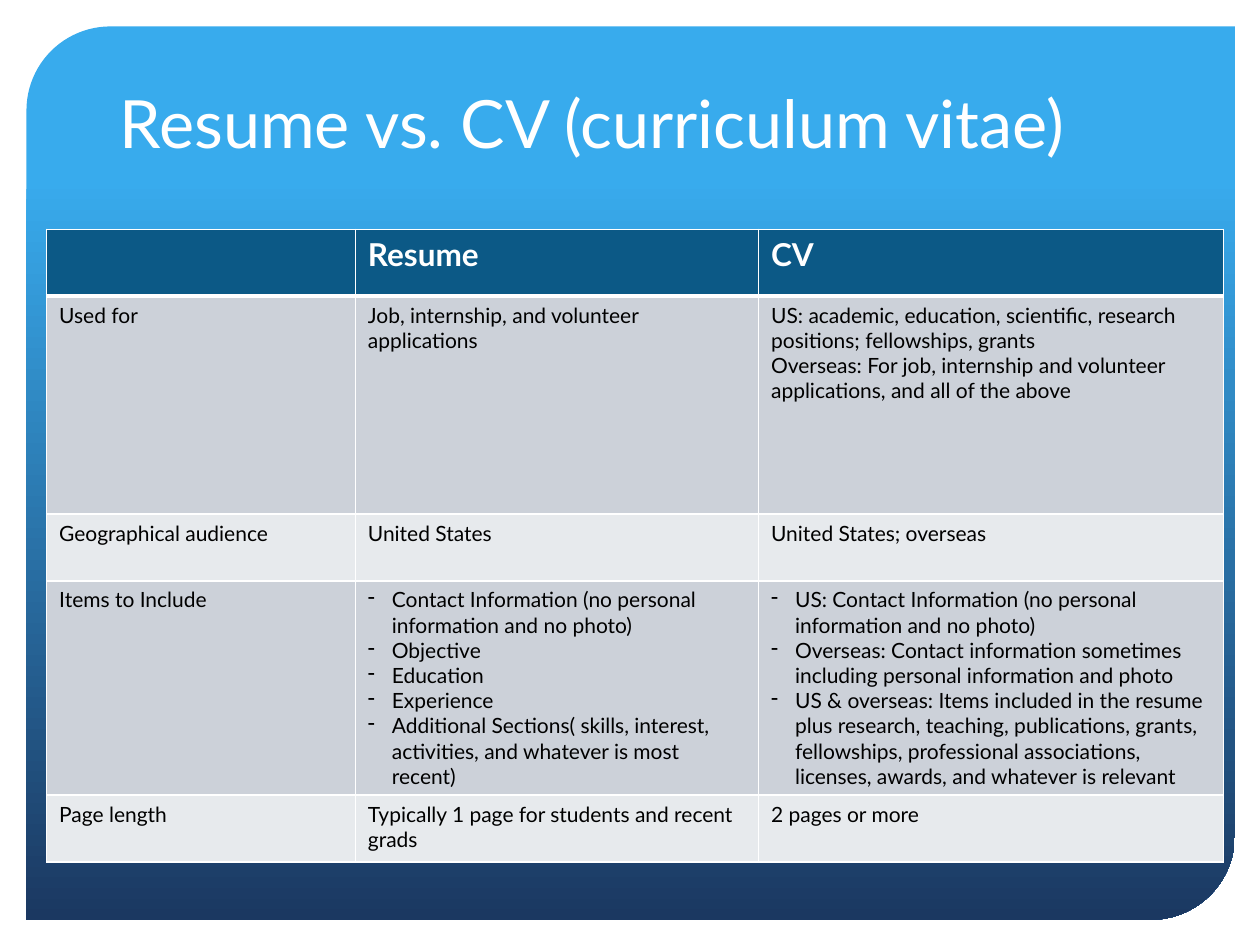
from dataclasses import dataclass

from lxml import etree
from pptx import Presentation
from pptx.dml.color import RGBColor
from pptx.enum.shapes import MSO_SHAPE
from pptx.enum.text import MSO_ANCHOR
from pptx.oxml.ns import qn
from pptx.util import Inches, Pt

PANEL_SHAPE = MSO_SHAPE.ROUND_2_DIAG_RECTANGLE
BOTTOM = MSO_ANCHOR.BOTTOM


@dataclass(frozen=True)
class Theme:
    font: str = "Lato"
    white: str = "FFFFFF"
    black: str = "000000"
    panel_top: str = "38ABED"
    panel_bottom: str = "1B3861"
    header: str = "0C5986"
    bands: tuple = ("CCD1D9", "E7EAED")
    title_size: int = 38
    header_size: int = 18
    body_size: int = 12
    border: int = 1
    header_border: int = 3


class SlideBuilder:
    def __init__(self, slide, theme):
        self.slide = slide
        self.theme = theme

    def add_run(self, paragraph, text, size, color, bold=False):
        run = paragraph.add_run()
        run.text = text
        run.font.name = self.theme.font
        run.font.size = Pt(size)
        run.font.bold = bold
        run.font.color.rgb = RGBColor.from_string(color)

    def add_panel(self, left, top, width, height):
        shape = self.slide.shapes.add_shape(
            PANEL_SHAPE, Inches(left), Inches(top), Inches(width), Inches(height))
        shape.shadow.inherit = False
        shape.adjustments[0] = 0.094
        shape.adjustments[1] = 0
        shape.line.fill.background()
        shape.fill.gradient()
        shape.fill.gradient_angle = 270
        stops = ((0.17, self.theme.panel_top), (1, self.theme.panel_bottom))
        for stop, (position, color) in zip(shape.fill.gradient_stops, stops):
            stop.position = position
            stop.color.rgb = RGBColor.from_string(color)

    def add_title(self, text, left, top, width, height):
        box = self.slide.shapes.add_textbox(
            Inches(left), Inches(top), Inches(width), Inches(height))
        frame = box.text_frame
        frame.word_wrap = True
        frame.vertical_anchor = BOTTOM
        self.add_run(frame.paragraphs[0], text, self.theme.title_size, self.theme.white)

    def add_borders(self, cell, top, bottom):
        properties = cell._tc.get_or_add_tcPr()
        side = self.theme.border
        for tag, width in (("lnL", side), ("lnR", side), ("lnT", top), ("lnB", bottom)):
            line = etree.SubElement(properties, qn(f"a:{tag}"), w=str(Pt(width)))
            fill = etree.SubElement(line, qn("a:solidFill"))
            etree.SubElement(fill, qn("a:srgbClr"), val=self.theme.white)

    def add_dash(self, paragraph):
        properties = paragraph._p.get_or_add_pPr()
        indent = Inches(0.19)
        properties.set("marL", str(indent))
        properties.set("indent", str(-indent))
        etree.SubElement(properties, qn("a:buFontTx"))
        etree.SubElement(properties, qn("a:buChar"), char="-")

    def fill_cell(self, cell, content, row):
        theme = self.theme
        is_header = row == 0
        self.add_borders(
            cell,
            top=theme.header_border if row == 1 else theme.border,
            bottom=theme.header_border if is_header else theme.border)
        color = theme.header if is_header else theme.bands[(row - 1) % 2]
        cell.fill.solid()
        cell.fill.fore_color.rgb = RGBColor.from_string(color)

        # A list is dashed; a string has one paragraph per line
        dashed = isinstance(content, list)
        lines = content if dashed else content.splitlines()
        frame = cell.text_frame
        for index, text in enumerate(lines):
            paragraph = frame.paragraphs[0] if index == 0 else frame.add_paragraph()
            if dashed:
                self.add_dash(paragraph)
            if is_header:
                self.add_run(paragraph, text, theme.header_size, theme.white, bold=True)
            else:
                self.add_run(paragraph, text, theme.body_size, theme.black)

    def add_table(self, rows, left, top, widths, heights):
        table = self.slide.shapes.add_table(
            len(rows), len(widths), Inches(left), Inches(top),
            Inches(sum(widths)), Inches(sum(heights))).table
        table.horz_banding = False
        for column, width in zip(table.columns, widths):
            column.width = Inches(width)
        for row, height in zip(table.rows, heights):
            row.height = Inches(height)
        for row_index, row in enumerate(rows):
            for column_index, content in enumerate(row):
                self.fill_cell(table.cell(row_index, column_index), content, row_index)


COMPARISON = [
    ["", "Resume", "CV"],
    ["Used for",
     "Job, internship, and volunteer applications",
     "US: academic, education, scientific, research positions; fellowships, grants\n"
     "Overseas: For job, internship and volunteer applications, and all of the above"],
    ["Geographical audience", "United States", "United States; overseas"],
    ["Items to Include",
     ["Contact Information (no personal information and no photo)",
      "Objective",
      "Education",
      "Experience",
      "Additional Sections( skills, interest, activities, and whatever is most recent)"],
     ["US: Contact Information (no personal information and no photo)",
      "Overseas: Contact information sometimes including personal information and photo",
      "US & overseas: Items included in the resume plus research, teaching, "
      "publications, grants, fellowships, professional associations, licenses, "
      "awards, and whatever is relevant"]],
    ["Page length", "Typically 1 page for students and recent grads", "2 pages or more"],
]


def main():
    presentation = Presentation()
    presentation.slide_width = Inches(10)
    presentation.slide_height = Inches(7.5)
    slide = presentation.slides.add_slide(presentation.slide_layouts[6])
    builder = SlideBuilder(slide, Theme())

    # Background panel and title
    builder.add_panel(0.21, 0.21, 9.59, 7.09)
    builder.add_title("Resume vs. CV (curriculum vitae)", 0.85, 0.19, 8.29, 1.14)

    # Comparison table
    builder.add_table(COMPARISON, 0.37, 1.82,
                      widths=[2.45, 3.2, 3.69],
                      heights=[0.53, 1.73, 0.53, 1.7, 0.53])

    presentation.save("out.pptx")


if __name__ == "__main__":
    main()
